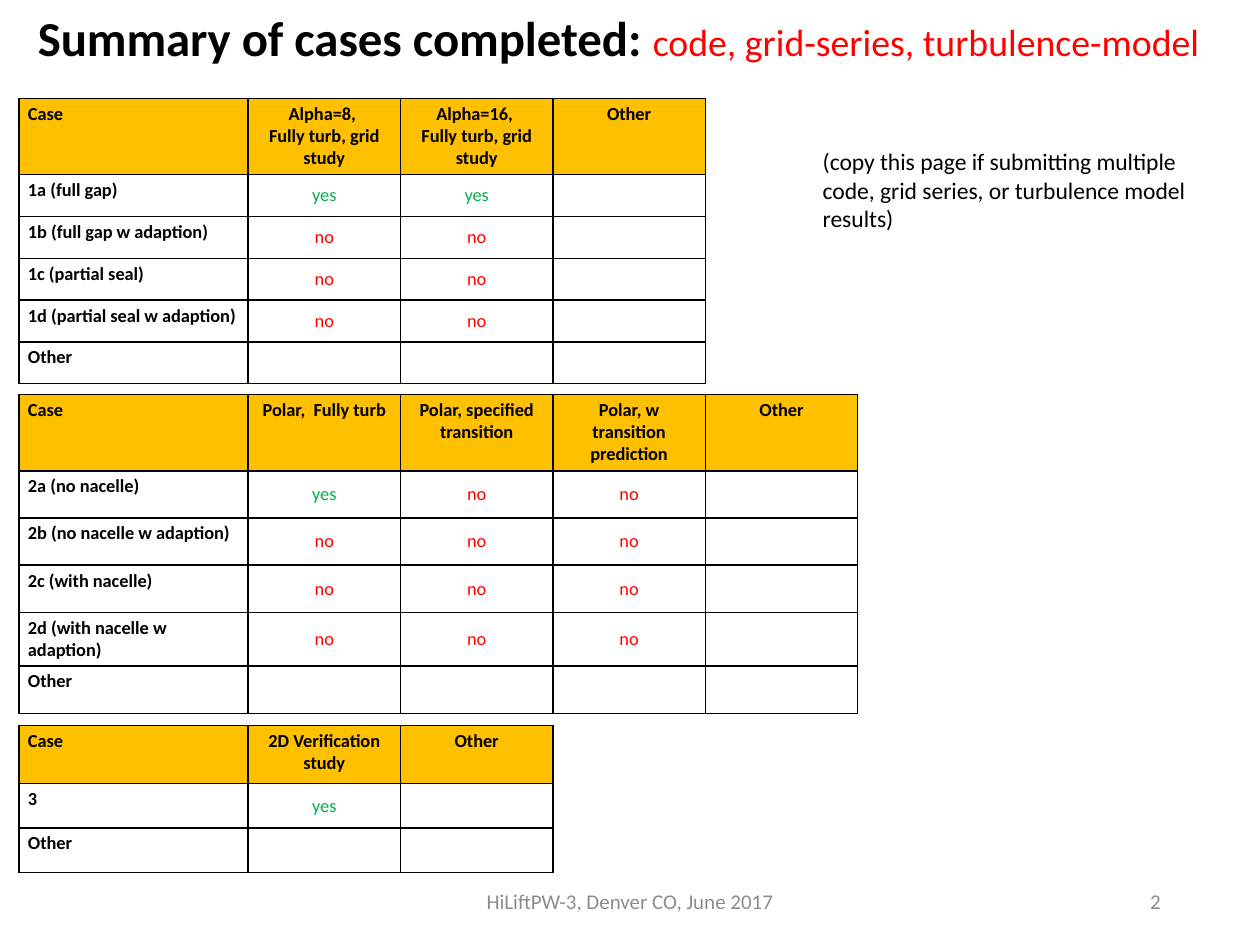
import dataclasses

import lxml.etree
import pptx
import pptx.dml.color
import pptx.enum.text
import pptx.oxml.ns
import pptx.util

Pt = pptx.util.Pt
Align = pptx.enum.text.PP_ALIGN
Anchor = pptx.enum.text.MSO_ANCHOR


@dataclasses.dataclass(frozen=True)
class Theme:
    font: str = "Calibri"
    black: str = "000000"
    red: str = "FF0000"
    green: str = "00B050"
    gray: str = "8C8C8C"
    header: str = "FFC000"
    title_size: float = 27.9
    subtitle_size: float = 21.6
    note_size: float = 13.5
    footer_size: float = 12
    table_size: float = 10.5


def rgb(value):
    return pptx.dml.color.RGBColor.from_string(value)


def add_text(paragraph, text, *, theme, size, color, bold=False):
    run = paragraph.add_run()
    run.text = text
    run.font.name = theme.font
    run.font.size = Pt(size)
    run.font.bold = bold
    run.font.color.rgb = rgb(color)


def add_child(parent, tag, **attributes):
    return lxml.etree.SubElement(parent, pptx.oxml.ns.qn(tag), **attributes)


class SlideBuilder:
    LEFT = 10.8
    CASE_WIDTH = 131
    RESULT_WIDTH = 87.1

    def __init__(self, slide, theme):
        self.slide = slide
        self.theme = theme

    def title(self, box, heading, detail):
        shape = self.slide.shapes.title
        shape.left, shape.top, shape.width, shape.height = map(Pt, box)
        frame = shape.text_frame
        frame.auto_size = pptx.enum.text.MSO_AUTO_SIZE.NONE
        frame.vertical_anchor = Anchor.MIDDLE
        paragraph = frame.paragraphs[0]
        paragraph.alignment = Align.LEFT
        paragraph.line_spacing = 0.9
        add_text(paragraph, heading, theme=self.theme, size=self.theme.title_size,
                 color=self.theme.black, bold=True)
        add_text(paragraph, detail, theme=self.theme, size=self.theme.subtitle_size,
                 color=self.theme.red)

    def text_box(self, box, text, *, size, color, align=Align.LEFT, anchor=Anchor.TOP):
        frame = self.slide.shapes.add_textbox(*map(Pt, box)).text_frame
        frame.word_wrap = True
        frame.vertical_anchor = anchor
        paragraph = frame.paragraphs[0]
        paragraph.alignment = align
        add_text(paragraph, text, theme=self.theme, size=size, color=color)

    def footer(self, left, width, text, align):
        self.text_box((left, 500.4, width, 28.8), text, size=self.theme.footer_size,
                      color=self.theme.gray, align=align, anchor=Anchor.MIDDLE)

    def table(self, top, header_height, row_height, headers, cases):
        """Draw a case table; short result lists leave the remaining cells empty."""
        columns = len(headers)
        rows = [headers] + [[case, *results] for case, *results in cases]
        width = self.CASE_WIDTH + self.RESULT_WIDTH * (columns - 1)
        height = header_height + row_height * len(cases)
        table = self.slide.shapes.add_table(
            len(rows), columns, Pt(self.LEFT), Pt(top), Pt(width), Pt(height)).table
        table.first_row = table.horz_banding = False
        for index, column in enumerate(table.columns):
            column.width = Pt(self.RESULT_WIDTH if index else self.CASE_WIDTH)
        for index, row in enumerate(table.rows):
            row.height = Pt(row_height if index else header_height)
            values = rows[index] + [""] * (columns - len(rows[index]))
            for position, (cell, text) in enumerate(zip(row.cells, values)):
                self.cell(cell, text, is_header=index == 0, is_case=position == 0)

    def cell(self, cell, text, *, is_header, is_case):
        self.borders(cell)
        cell.margin_left = cell.margin_right = Pt(5.2)
        cell.margin_top = cell.margin_bottom = Pt(2.6)
        is_label = is_header or is_case
        cell.vertical_anchor = Anchor.TOP if is_label else Anchor.MIDDLE
        if is_header:
            cell.fill.solid()
            cell.fill.fore_color.rgb = rgb(self.theme.header)
        else:
            cell.fill.background()
        result_colors = {"yes": self.theme.green, "no": self.theme.red}
        frame = cell.text_frame
        for index, line in enumerate(text.split("\n")):
            paragraph = frame.add_paragraph() if index else frame.paragraphs[0]
            paragraph.alignment = Align.LEFT if is_case else Align.CENTER
            if line:
                add_text(paragraph, line, theme=self.theme, size=self.theme.table_size,
                         color=result_colors.get(line, self.theme.black), bold=is_label)
            else:
                # Keeps empty cells from growing to the default type size.
                add_child(paragraph._p, "a:endParaRPr", sz=str(int(self.theme.table_size * 100)))

    def borders(self, cell):
        properties = cell._tc.get_or_add_tcPr()
        for side in ("L", "R", "T", "B"):
            line = add_child(properties, f"a:ln{side}", w=str(int(Pt(1))))
            fill = add_child(line, "a:solidFill")
            add_child(fill, "a:srgbClr", val=self.theme.black)


def main():
    presentation = pptx.Presentation()
    presentation.slide_width, presentation.slide_height = Pt(720), Pt(540)
    theme = Theme()
    slide = presentation.slides.add_slide(presentation.slide_layouts.get_by_name("Title Only"))
    builder = SlideBuilder(slide, theme)

    builder.title((14.4, 7.2, 695.5, 32.4), "Summary of cases completed: ",
                  "code, grid-series, turbulence-model")
    builder.table(
        56.2, 43.6, 23.9,
        ["Case", "Alpha=8, \nFully turb, grid study", "Alpha=16, \nFully turb, grid study", "Other"],
        [("1a (full gap)", "yes", "yes"),
         ("1b (full gap w adaption)", "no", "no"),
         ("1c (partial seal)", "no", "no"),
         ("1d (partial seal w adaption)", "no", "no"),
         ("Other",)])
    builder.table(
        225.4, 43.6, 27,
        ["Case", "Polar,  Fully turb", "Polar, specified transition",
         "Polar, w transition prediction", "Other"],
        [("2a (no nacelle)", "yes", "no", "no"),
         ("2b (no nacelle w adaption)", "no", "no", "no"),
         ("2c (with nacelle)", "no", "no", "no"),
         ("2d (with nacelle w adaption)", "no", "no", "no"),
         ("Other",)])
    builder.table(
        414.6, 33.1, 25.5,
        ["Case", "2D Verification study", "Other"],
        [("3", "yes"), ("Other",)])
    builder.text_box(
        (463, 80.6, 221.8, 56.2),
        "(copy this page if submitting multiple code, grid series, or turbulence model results)",
        size=theme.note_size, color=theme.black)
    builder.footer(238.3, 243.4, "HiLiftPW-3, Denver CO, June 2017", Align.CENTER)
    builder.footer(508.3, 162, "2", Align.RIGHT)
    presentation.save("out.pptx")


if __name__ == "__main__":
    main()
